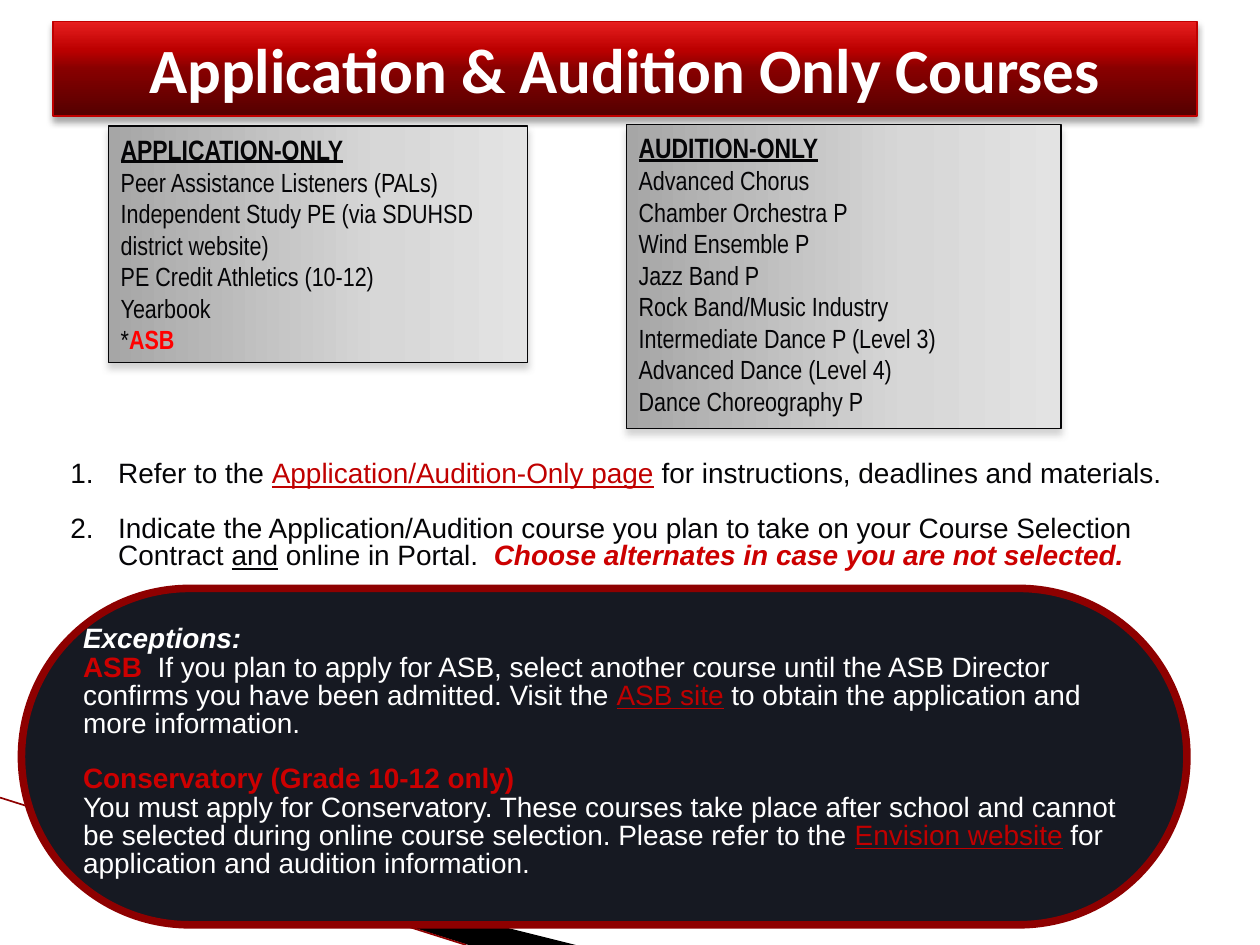
from lxml import etree
from pptx import Presentation, util as u
from pptx.dml.color import RGBColor
from pptx.enum import shapes, text
from pptx.oxml import ns

WHITE = RGBColor(0xFF, 0xFF, 0xFF)
BLACK = RGBColor(0, 0, 0)
INK = RGBColor(0x05, 0x05, 0x07)
NAVY = RGBColor(0x16, 0x19, 0x22)
MAROON = RGBColor(0x8E, 0, 0)
LINK = RGBColor(0xC0, 0, 0)
ALERT = RGBColor(0xCC, 0, 0)
RED = RGBColor(0xFF, 0, 0)
GRAY = RGBColor(0x80, 0x80, 0x80)
TITLE_STOPS = [(0, RGBColor(0x54, 0, 0)), (50, RGBColor(0x88, 0, 0)),
               (70, RGBColor(0xBC, 0, 0)), (100, RGBColor(0xE7, 0x1F, 0x1F))]
PANEL_STOPS = [(0, RGBColor(0xA6, 0xA6, 0xA6)), (65, RGBColor(0xD7, 0xD7, 0xD7)),
               (100, RGBColor(0xE3, 0xE3, 0xE3))]
CELL = u.Inches(0.1)


def grid(*cells):
    """Turn columns and rows of the 100 by 75 grid into lengths."""
    return [round(c * CELL) for c in cells]


def child(parent, tag, **attrs):
    """Add a DrawingML element to a parent."""
    return etree.SubElement(parent, ns.qn("a:" + tag), {k: str(v) for k, v in attrs.items()})


def add_color(parent, color):
    """Add an RGB colour element to a parent."""
    return child(parent, "srgbClr", val=color)


def add_run(p, words, size, font, color, bold=False, italic=False, underline=False):
    """Add one formatted run."""
    r = p.add_run()
    r.text = words
    f = r.font
    f.size, f.name, f.color.rgb = u.Pt(size), font, color
    f.bold, f.italic, f.underline = bold, italic, underline


def add_paragraph(tf, first):
    """Return the first paragraph of a frame or a new left-aligned one."""
    p = tf.paragraphs[0] if first else tf.add_paragraph()
    p.alignment = text.PP_ALIGN.LEFT
    return p


def shaded_box(s, box, stops, angle, line, shadow):
    """Draw a rectangle with a gradient fill and a soft shadow below."""
    sp = s.shapes.add_shape(shapes.MSO_SHAPE.RECTANGLE, *grid(*box))
    sp.shadow.inherit = False
    sp.line.color.rgb, sp.line.width = line, u.Pt(0.75)
    sp.fill.gradient()
    sp.fill.gradient_angle = angle
    stop_list = sp._element.spPr.find(".//" + ns.qn("a:gsLst"))
    for old in list(stop_list):
        stop_list.remove(old)
    for share, color in stops:
        add_color(child(stop_list, "gs", pos=share * 1000), color)
    effects = sp._element.spPr.find(ns.qn("a:effectLst"))
    outer = child(effects, "outerShdw", blurRad=u.Pt(4), dist=u.Pt(3),
                  dir=5400000, rotWithShape=0)
    child(add_color(outer, shadow), "alpha", val=35000)
    sp.text_frame.word_wrap = True
    return sp


def backdrop(s):
    """Draw the black wedge and thin line at the lower left."""
    points = [grid(*pt) for pt in [(5.3, 64.9), (45.7, 75), (37.2, 75), (5.4, 65)]]
    builder = s.shapes.build_freeform(*points[0])
    builder.add_line_segments(points[1:])
    sp = builder.convert_to_shape()
    sp.shadow.inherit = False
    sp.fill.solid()
    sp.fill.fore_color.rgb = BLACK
    sp.line.fill.background()
    line = s.shapes.add_connector(shapes.MSO_CONNECTOR.STRAIGHT, *grid(0, 63.3, 37, 75))
    line.line.color.rgb, line.line.width = MAROON, u.Pt(0.95)
    child(line._element.spPr, "effectLst")


def title_bar(s, box, words):
    """Draw the red title bar."""
    sp = shaded_box(s, box, TITLE_STOPS, 90, LINK, BLACK)
    tf = sp.text_frame
    tf.vertical_anchor = text.MSO_ANCHOR.MIDDLE
    p = tf.paragraphs[0]
    p.alignment = text.PP_ALIGN.CENTER
    add_run(p, words, 36, "Calibri", WHITE, bold=True)


def course_panel(s, box, heading, courses, starred=None):
    """Draw a grey panel with a heading and its courses."""
    tf = shaded_box(s, box, PANEL_STOPS, 0, INK, GRAY).text_frame
    tf.vertical_anchor = text.MSO_ANCHOR.TOP
    add_run(add_paragraph(tf, True), heading, 16, "Arial Narrow", INK,
            bold=True, underline=True)
    for course in courses:
        add_run(add_paragraph(tf, False), course, 15, "Arial Narrow", INK)
    if starred:
        p = add_paragraph(tf, False)
        add_run(p, "*", 15, "Arial Narrow", INK)
        add_run(p, starred, 15, "Arial Narrow", RED, bold=True)


def steps(s, box, items):
    """Write the numbered steps."""
    tf = s.shapes.add_textbox(*grid(*box)).text_frame
    tf.word_wrap = True
    for i, runs in enumerate(items):
        p = add_paragraph(tf, i == 0)
        p.line_spacing = 0.8
        if i:
            p.space_before = u.Pt(16)
        pPr = p._p.get_or_add_pPr()
        indent, = grid(3.8)
        pPr.set("marL", str(indent))
        pPr.set("indent", str(-indent))
        child(pPr, "buFont", typeface="Arial")
        child(pPr, "buAutoNum", type="arabicPeriod")
        for words, color, style in runs:
            add_run(p, words, 16, "Arial", color, **style)


def exceptions(s, box, paragraphs):
    """Draw the dark rounded box; each paragraph has a gap before it and runs."""
    sp = s.shapes.add_shape(shapes.MSO_SHAPE.ROUNDED_RECTANGLE, *grid(*box))
    sp.adjustments[0] = 0.5
    sp.shadow.inherit = False
    sp.fill.solid()
    sp.fill.fore_color.rgb = NAVY
    sp.line.color.rgb, sp.line.width = MAROON, u.Pt(4.33)
    tf = sp.text_frame
    tf.word_wrap = True
    tf.vertical_anchor = text.MSO_ANCHOR.MIDDLE
    tf.margin_bottom, = grid(1.1)
    for i, (gap, runs) in enumerate(paragraphs):
        p = add_paragraph(tf, i == 0)
        p.line_spacing = 0.84
        if gap:
            p.space_before = u.Pt(gap)
        for words, color, style in runs:
            add_run(p, words, 16, "Arial", color, **style)


def main():
    """Build the slide and save it."""
    prs = Presentation()
    prs.slide_width, prs.slide_height = grid(100, 75)
    s = prs.slides.add_slide(prs.slide_layouts[6])
    plain, bold, under = {}, {"bold": True}, {"underline": True}
    strong = {"bold": True, "italic": True}
    backdrop(s)
    title_bar(s, (4.2, 1.7, 90.8, 7.5), "Application & Audition Only Courses")
    steps(s, (4.6, 36.2, 90.8, 9.5), [
        [("Refer to the ", INK, plain), ("Application/Audition-Only page", LINK, under),
         (" for instructions, deadlines and materials.", INK, plain)],
        [("Indicate the Application/Audition course you plan to take on your "
          "Course Selection Contract ", INK, plain), ("and", INK, under),
         (" online in Portal.  ", INK, plain),
         ("Choose alternates in case you are not selected.", ALERT, strong)],
    ])
    exceptions(s, (1.7, 46.7, 92.5, 26.7), [
        (0, [("Exceptions:", WHITE, strong)]),
        (0, [("ASB  ", ALERT, bold),
             ("If you plan to apply for ASB, select another course until the ASB Director "
              "confirms you have been admitted. Visit the ", WHITE, plain),
             ("ASB site", LINK, under),
             (" to obtain the application and more information.", WHITE, plain)]),
        (15.4, [("Conservatory (Grade 10-12 only)", ALERT, bold)]),
        (0, [("You must apply for Conservatory. These courses take place after school and "
              "cannot be selected during online course selection. Please refer to the ",
              WHITE, plain),
             ("Envision website", LINK, under),
             (" for application and audition information.", WHITE, plain)]),
    ])
    course_panel(s, (8.6, 10, 33.3, 18.8), "APPLICATION-ONLY", [
        "Peer Assistance Listeners (PALs)",
        "Independent Study PE (via SDUHSD district website)",
        "PE Credit Athletics (10-12)", "Yearbook"], "ASB")
    course_panel(s, (49.7, 9.9, 34.5, 24.1), "AUDITION-ONLY", [
        "Advanced Chorus", "Chamber Orchestra P", "Wind Ensemble P", "Jazz Band P",
        "Rock Band/Music Industry", "Intermediate Dance P (Level 3)",
        "Advanced Dance (Level 4)", "Dance Choreography P"])
    prs.save("out.pptx")


if __name__ == "__main__":
    main()
